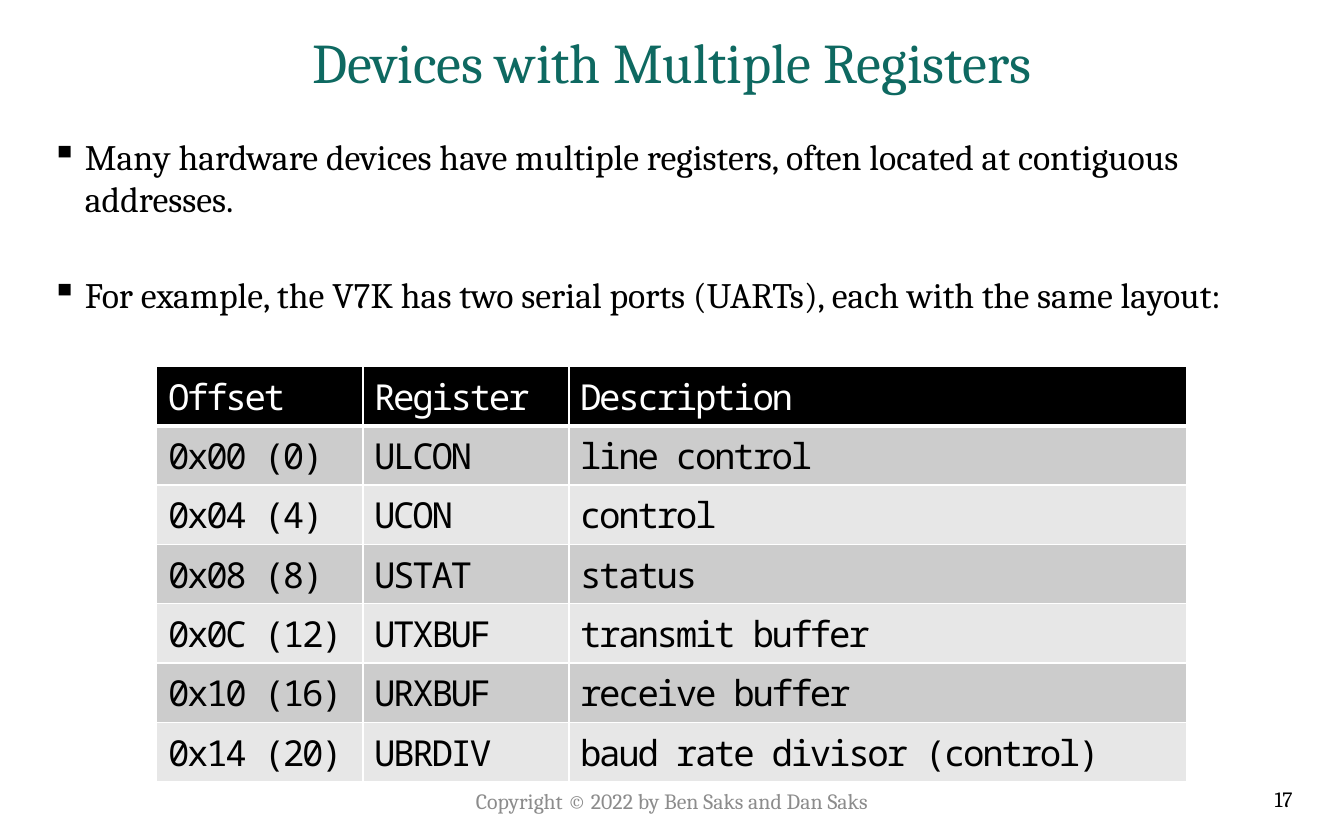
"""Build a slide on hardware devices with multiple registers."""
import pptx
import pptx.dml.color
import pptx.enum.text
import pptx.oxml.ns
import pptx.util
from lxml import etree
from pptx.util import Inches

COLORS = {"title": "0E6961", "text": "000000", "footer": "8C8C8C", "white": "FFFFFF",
          "header": "000000", "odd": "CCCCCC", "even": "E7E7E7"}
SERIF, MONO = "Cambria", "Noto Sans Mono"
ALIGN = pptx.enum.text.PP_ALIGN
ANCHOR = pptx.enum.text.MSO_ANCHOR

BULLETS = [
    "Many hardware devices have multiple registers, often located at contiguous addresses.",
    "For example, the V7K has two serial ports (UARTs), each with the same layout:",
]
REGISTERS = [
    ("Offset", "Register", "Description"),
    ("0x00 (0)", "ULCON", "line control"),
    ("0x04 (4)", "UCON", "control"),
    ("0x08 (8)", "USTAT", "status"),
    ("0x0C (12)", "UTXBUF", "transmit buffer"),
    ("0x10 (16)", "URXBUF", "receive buffer"),
    ("0x14 (20)", "UBRDIV", "baud rate divisor (control)"),
]


def rgb(name):
    return pptx.dml.color.RGBColor.from_string(COLORS[name])


def add_element(parent, tag, **attrs):
    return etree.SubElement(parent, pptx.oxml.ns.qn(tag), attrs)


def format_runs(p, size, color, font=SERIF):
    for r in p.runs:
        r.font.size = pptx.util.Pt(size)
        r.font.name = font
        r.font.color.rgb = rgb(color)


def add_text(s, box, lines, size, color, align=ALIGN.LEFT, anchor=ANCHOR.TOP):
    tf = s.shapes.add_textbox(*map(Inches, box)).text_frame
    tf.word_wrap = True
    tf.vertical_anchor = anchor
    tf.text = "\n".join(lines)
    for p in tf.paragraphs:
        p.alignment = align
        format_runs(p, size, color)
    return tf


def add_bullets(tf, indent, gap):
    for i, p in enumerate(tf.paragraphs):
        if i:
            p.space_before = pptx.util.Pt(gap)
        pPr = p._p.get_or_add_pPr()
        pPr.set("marL", str(Inches(indent)))
        pPr.set("indent", str(-Inches(indent)))
        add_element(pPr, "a:buChar", char="▪")


def set_borders(cell, widths):
    tcPr = cell._tc.get_or_add_tcPr()
    for side, width in widths.items():
        ln = add_element(tcPr, f"a:ln{side}", w=str(pptx.util.Pt(width)))
        fill = add_element(ln, "a:solidFill")
        add_element(fill, "a:srgbClr", val=COLORS["white"])


def format_cell(cell, text, row):
    header = row == 0
    cell.text = text
    p = cell.text_frame.paragraphs[0]
    format_runs(p, 23, "white" if header else "text", MONO)
    for r in p.runs:
        r._r.get_or_add_rPr().set("spc", "-150")
    set_borders(cell, {"L": 1, "R": 1, "T": 3 if row == 1 else 1, "B": 3 if header else 1})
    cell.fill.solid()
    cell.fill.fore_color.rgb = rgb("header" if header else "odd" if row % 2 else "even")


def add_register_table(s, left, top, col_widths, row_height):
    rows, cols = len(REGISTERS), len(col_widths)
    table = s.shapes.add_table(rows, cols, Inches(left), Inches(top),
                               Inches(sum(col_widths)), Inches(row_height * rows)).table
    table.horz_banding = False
    for col, width in zip(table.columns, col_widths):
        col.width = Inches(width)
    for i, values in enumerate(REGISTERS):
        table.rows[i].height = Inches(row_height)
        for j, text in enumerate(values):
            format_cell(table.cell(i, j), text, i)


def main():
    prs = pptx.Presentation()
    prs.slide_width, prs.slide_height = Inches(12), Inches(7.5)
    s = prs.slides.add_slide(prs.slide_layouts[6])
    add_text(s, (0.36, 0.25, 11.28, 0.6), ["Devices with Multiple Registers"], 36, "title",
             ALIGN.CENTER, ANCHOR.MIDDLE)
    body = add_text(s, (0.36, 1.15, 11.28, 5.8), BULLETS, 23, "text")
    add_bullets(body, 0.3, 34)
    add_text(s, (9.72, 6.95, 1.92, 0.35), ["17"], 14, "text", ALIGN.RIGHT, ANCHOR.BOTTOM)
    add_text(s, (2.4, 6.95, 7.2, 0.4), ["Copyright © 2022 by Ben Saks and Dan Saks"], 14,
             "footer", ALIGN.CENTER, ANCHOR.MIDDLE)
    add_register_table(s, 1.4, 3.27, (1.84, 1.84, 5.52), 0.53)
    prs.save("out.pptx")


if __name__ == "__main__":
    main()
